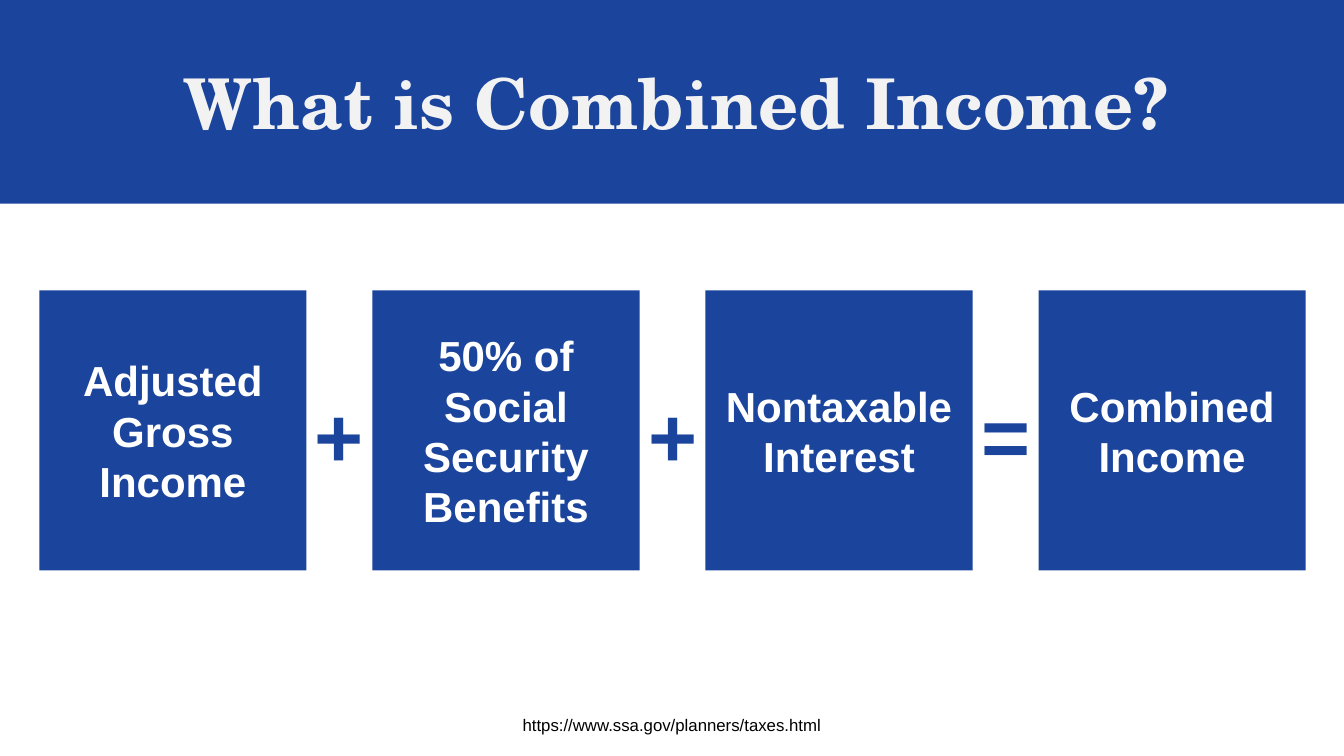
from pptx import Presentation
from pptx.dml.color import RGBColor
from pptx.enum.shapes import MSO_SHAPE
from pptx.enum.text import MSO_ANCHOR, MSO_AUTO_SIZE, PP_ALIGN
from pptx.util import Inches, Pt

COLORS = {"blue": "1B449C", "pale": "F2F2F2", "white": "FFFFFF", "black": "000000"}
TITLE = {"name": "TeX Gyre Schola", "size": Pt(50), "bold": True}
TERM = {"name": "Arial", "size": Pt(30), "bold": True}
SIGN = {"name": "Arial", "size": Pt(60), "bold": True}
LINK = {"name": "Arial", "size": Pt(12), "bold": False}
TERMS = [
    "Adjusted\nGross\nIncome",
    "50% of Social Security Benefits",
    "Nontaxable Interest",
    "Combined Income",
]
SIGNS = "++="


def write(frame, text, style, color):
    frame.text = text
    for para in frame.paragraphs:
        para.alignment = PP_ALIGN.CENTER
        for key, value in style.items():
            setattr(para.font, key, value)
        para.font.color.rgb = RGBColor.from_string(COLORS[color])


def add_block(slide, box):
    block = slide.shapes.add_shape(MSO_SHAPE.RECTANGLE, *map(Inches, box))
    block.shadow.inherit = False
    block.fill.solid()
    block.fill.fore_color.rgb = RGBColor.from_string(COLORS["blue"])
    block.line.fill.background()
    return block


def add_label(slide, box, text, style, color, wrap=True):
    frame = slide.shapes.add_textbox(*map(Inches, box)).text_frame
    frame.word_wrap = wrap
    frame.auto_size = MSO_AUTO_SIZE.SHAPE_TO_FIT_TEXT
    write(frame, text, style, color)


def add_header(slide, box):
    left, top, width, height = box
    add_block(slide, box)
    add_label(slide, (left, top + 0.54, width + 0.09, 0.94),
              "What is Combined Income?", TITLE, "pale")


def add_sum(slide, box):
    left, top, width, height = box
    side = 2.65
    gap = (width - len(TERMS) * side) / (len(TERMS) - 1)
    for i, term in enumerate(TERMS):
        block = add_block(slide, (left + i * (side + gap), top, side, height))
        frame = block.text_frame
        frame.word_wrap = True
        frame.vertical_anchor = MSO_ANCHOR.MIDDLE
        write(frame, term, TERM, "white")
    wide = 0.69
    for i, sign in enumerate(SIGNS):
        mid = left + (i + 1) * (side + gap) - gap / 2
        add_label(slide, (mid - wide / 2, top + 0.88, wide, 1.11),
                  sign, SIGN, "blue", False)


def add_footer(slide, box):
    add_label(slide, box, "https://www.ssa.gov/planners/taxes.html", LINK, "black")


def main():
    deck = Presentation()
    deck.slide_width = Inches(13.33)
    deck.slide_height = Inches(7.5)
    slide = deck.slides.add_slide(deck.slide_layouts[6])
    add_header(slide, (0, 0, 13.33, 2.02))
    add_footer(slide, (0, 7.04, 13.33, 0.3))
    add_sum(slide, (0.39, 2.88, 12.56, 2.78))
    deck.save("out.pptx")


if __name__ == "__main__":
    main()
